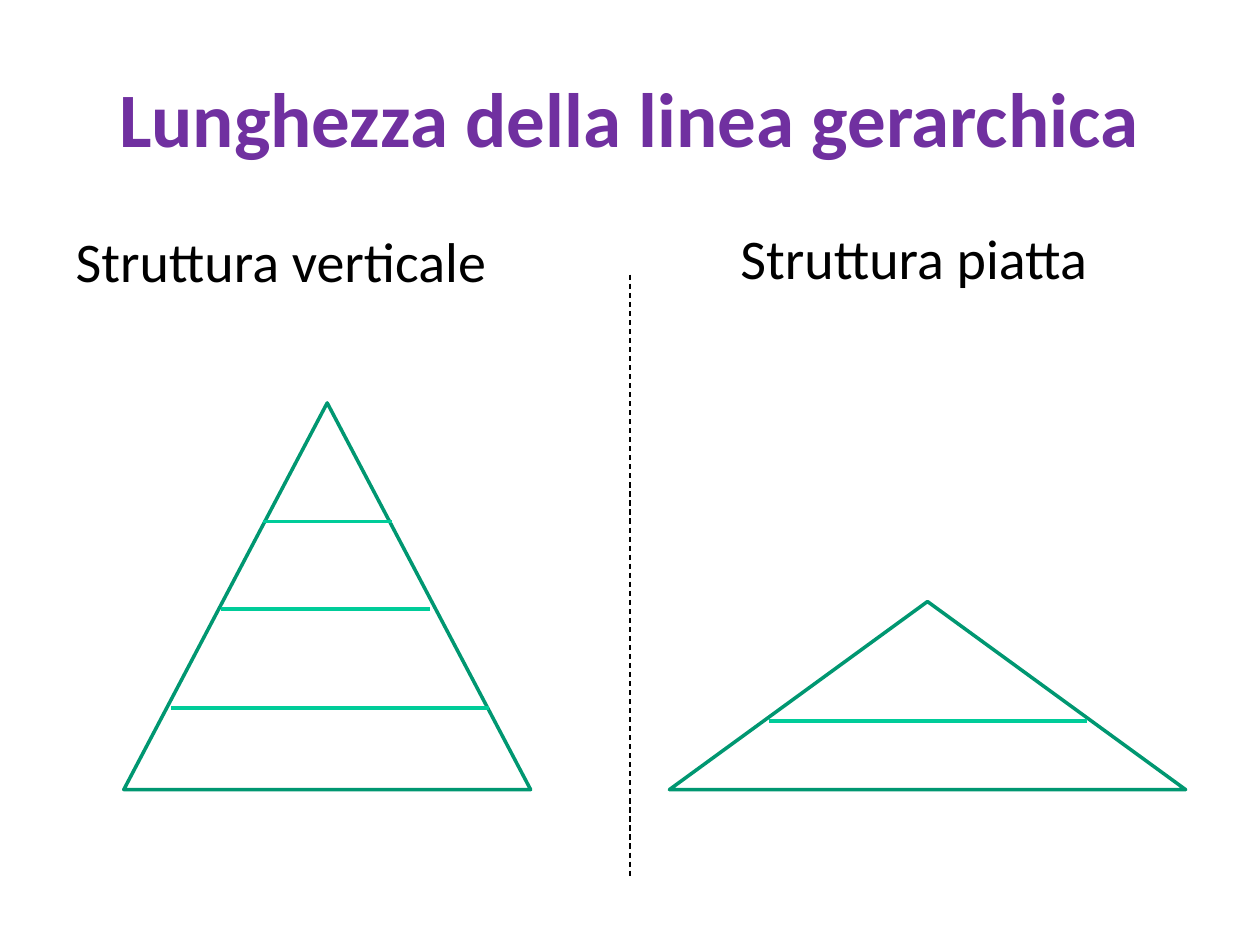
from dataclasses import dataclass

from lxml import etree
from pptx import Presentation
from pptx.dml.color import RGBColor
from pptx.enum.dml import MSO_LINE
from pptx.enum.shapes import MSO_CONNECTOR, MSO_SHAPE
from pptx.enum.text import MSO_ANCHOR, MSO_AUTO_SIZE, PP_ALIGN
from pptx.oxml.ns import qn
from pptx.util import Pt

STRAIGHT = MSO_CONNECTOR.STRAIGHT
TRIANGLE = MSO_SHAPE.ISOSCELES_TRIANGLE
DASH = MSO_LINE.DASH
TOP, MIDDLE = MSO_ANCHOR.TOP, MSO_ANCHOR.MIDDLE
CENTER, LEFT = PP_ALIGN.CENTER, PP_ALIGN.LEFT
NO_AUTOFIT = MSO_AUTO_SIZE.NONE


@dataclass(frozen=True)
class Theme:
    font: str = "Calibri"
    title_size: int = 44
    heading_size: int = 32
    title: RGBColor = RGBColor(0x70, 0x30, 0xA0)
    text: RGBColor = RGBColor(0, 0, 0)
    outline: RGBColor = RGBColor(0x00, 0x97, 0x71)
    level: RGBColor = RGBColor(0x00, 0xCC, 0x99)


THEME = Theme()


def place(shape, left, top, width, height):
    shape.left, shape.top = Pt(left), Pt(top)
    shape.width, shape.height = Pt(width), Pt(height)


def write(shape, text, size, color, bold, align, anchor):
    """Set one formatted paragraph and return it."""
    frame = shape.text_frame
    frame.text = text
    frame.word_wrap = True
    frame.auto_size = NO_AUTOFIT
    frame.vertical_anchor = anchor
    para = frame.paragraphs[0]
    para.alignment = align
    font = para.runs[0].font
    font.name, font.size, font.bold = THEME.font, Pt(size), bold
    font.color.rgb = color
    return para


def write_heading(shape, text):
    """Write a structure name with a hanging indent and no bullet."""
    para = write(shape, text, THEME.heading_size, THEME.text, False, LEFT, TOP)
    para.space_before = Pt(8)
    properties = para._p.get_or_add_pPr()
    properties.set("marL", str(Pt(27)))
    properties.set("indent", str(Pt(-27)))
    etree.SubElement(properties, qn("a:buNone"))


def add_line(page, start, end, color, width):
    line = page.shapes.add_connector(STRAIGHT, *map(Pt, start + end))
    line.line.color.rgb = color
    line.line.width = Pt(width)
    etree.SubElement(line._element.spPr, qn("a:effectLst"))
    return line


def add_pyramid(page, left, top, width, height, levels):
    """Draw a triangle cut by levels, each given as left, right and height."""
    pyramid = page.shapes.add_shape(TRIANGLE, *map(Pt, (left, top, width, height)))
    pyramid.shadow.inherit = False
    pyramid.fill.background()
    pyramid.line.color.rgb = THEME.outline
    pyramid.line.width = Pt(2)
    for start, end, y in levels:
        add_line(page, (start, y), (end, y), THEME.level, 2.25)


def main():
    deck = Presentation()
    deck.slide_width, deck.slide_height = Pt(720), Pt(540)
    page = deck.slides.add_slide(deck.slide_layouts[1])

    title = page.shapes.title
    place(title, 36, 10, 647.5, 113)
    write(title, "Lunghezza della linea gerarchica", THEME.title_size,
          THEME.title, True, CENTER, MIDDLE)

    vertical_heading = page.placeholders[1]
    place(vertical_heading, 36, 126, 256.5, 59)
    write_heading(vertical_heading, "Struttura verticale")
    add_pyramid(page, 70.75, 230.25, 232.5, 221,
                [(150.5, 224, 298), (126, 245.5, 348), (98, 279.5, 404.75)])

    flat_heading = page.shapes.add_textbox(*map(Pt, (416, 124, 256.5, 59)))
    write_heading(flat_heading, "Struttura piatta")
    add_pyramid(page, 382.5, 343.75, 295, 107.5, [(439.5, 621, 412)])

    divider = add_line(page, (360, 157), (360, 502.5), THEME.text, 0.75)
    divider.line.dash_style = DASH

    deck.save("out.pptx")


if __name__ == "__main__":
    main()
